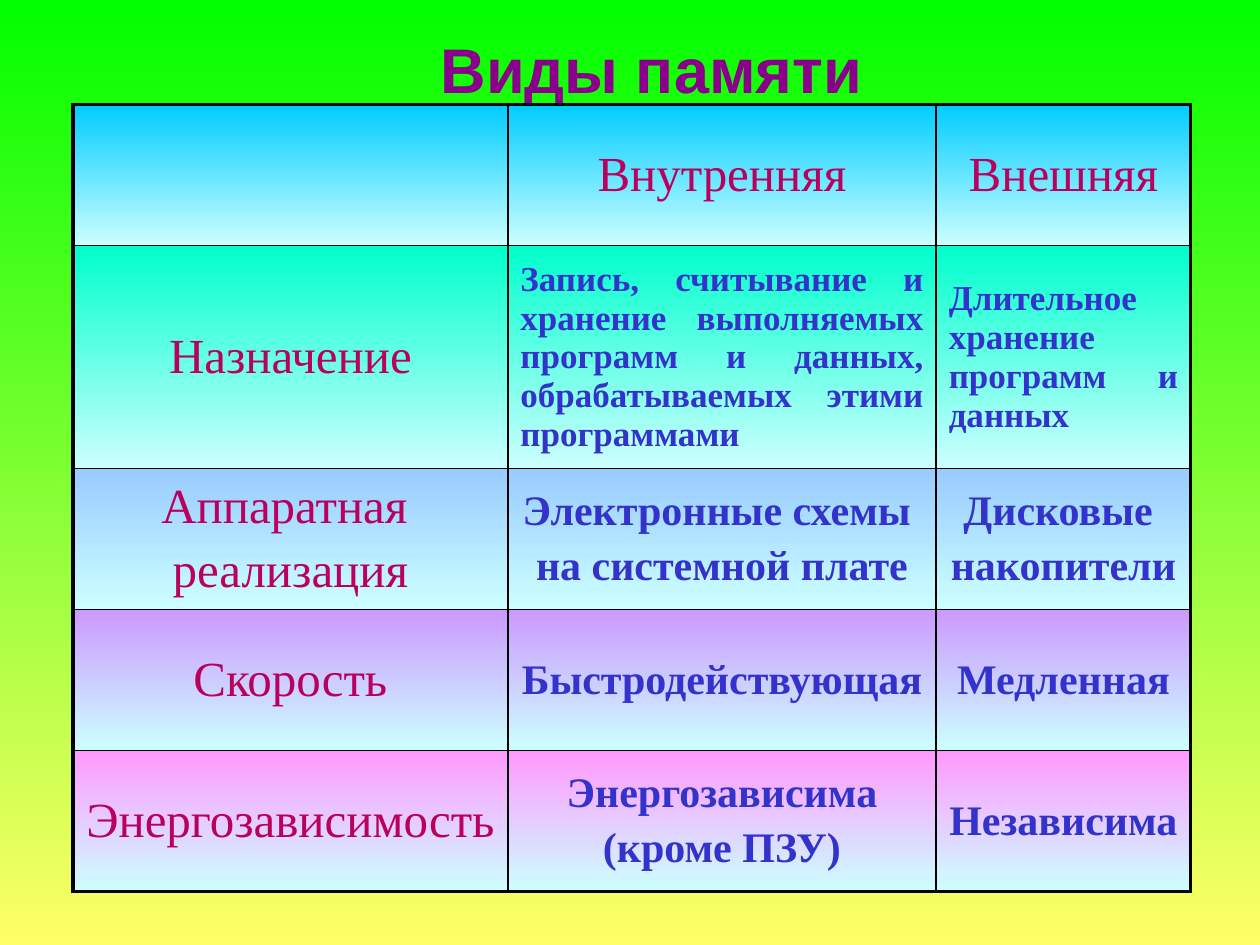
"""Build a slide with a table comparing internal and external memory."""
from lxml.etree import SubElement
from pptx import Presentation
from pptx.dml.color import RGBColor
from pptx.enum.text import MSO_ANCHOR, PP_ALIGN
from pptx.oxml.ns import qn
from pptx.util import Inches, Pt

GREEN = RGBColor(0x00, 0xFF, 0x00)
YELLOW = RGBColor(0xFF, 0xFF, 0x66)
PURPLE = RGBColor(0x8B, 0x00, 0x8B)
CRIMSON = RGBColor(0xBA, 0x00, 0x5D)
BLUE = RGBColor(0x33, 0x33, 0xCC)
BLACK = RGBColor(0x00, 0x00, 0x00)
PALE = RGBColor(0xCC, 0xFF, 0xFF)
ROW_COLOURS = [
    RGBColor(0x00, 0xCC, 0xFF),
    RGBColor(0x00, 0xFF, 0xCC),
    RGBColor(0x99, 0xCC, 0xFF),
    RGBColor(0xCC, 0x99, 0xFF),
    RGBColor(0xFF, 0x99, 0xFF),
]
COLUMN_WIDTHS = [3.45, 3.4, 2.02]
ROW_HEIGHT = 1.12
THIN, THICK = Pt(1), Pt(2.25)
MEMORY_ROWS = [
    ["", "Внутренняя", "Внешняя"],
    [
        "Назначение",
        "Запись, считывание и хранение выполняемых программ и данных, "
        "обрабатываемых этими программами",
        "Длительное хранение программ и данных",
    ],
    ["Аппаратная \nреализация", "Электронные схемы \nна системной плате", "Дисковые \nнакопители"],
    ["Скорость", "Быстродействующая", "Медленная"],
    ["Энергозависимость", "Энергозависима\n(кроме ПЗУ)", "Независима"],
]


def write_text(frame, text, *, size, colour, font="Times New Roman", bold=False,
               align=PP_ALIGN.CENTER):
    frame.text = text
    frame.word_wrap = True
    for index, paragraph in enumerate(frame.paragraphs):
        paragraph.alignment = align
        paragraph.space_before = Pt(size * 0.2 if index else 0)
        paragraph.font.size = Pt(size)
        paragraph.font.name = font
        paragraph.font.bold = bold
        paragraph.font.color.rgb = colour


def fill_downwards(fill, top_colour, bottom_colour):
    fill.gradient()
    fill.gradient_angle = 270
    for stop, colour in zip(fill.gradient_stops, (top_colour, bottom_colour)):
        stop.color.rgb = colour


presentation = Presentation()
presentation.slide_width = Inches(10)
presentation.slide_height = Inches(7.5)
slide = presentation.slides.add_slide(presentation.slide_layouts[6])
fill_downwards(slide.background.fill, GREEN, YELLOW)

title = slide.shapes.add_textbox(Inches(0.92), Inches(0.25), Inches(8.5), Inches(0.58))
title.text_frame.vertical_anchor = MSO_ANCHOR.MIDDLE
write_text(title.text_frame, "Виды памяти", size=36, colour=PURPLE, font="Arial", bold=True)

table = slide.shapes.add_table(
    len(MEMORY_ROWS), len(COLUMN_WIDTHS), Inches(0.58), Inches(0.83),
    Inches(sum(COLUMN_WIDTHS)), Inches(ROW_HEIGHT * len(MEMORY_ROWS)),
).table
table.first_row = table.horz_banding = False
for column, width in zip(table.columns, COLUMN_WIDTHS):
    column.width = Inches(width)

last_row, last_column = len(MEMORY_ROWS) - 1, len(COLUMN_WIDTHS) - 1
for row_index, texts in enumerate(MEMORY_ROWS):
    for column_index, text in enumerate(texts):
        cell = table.cell(row_index, column_index)
        cell.vertical_anchor = MSO_ANCHOR.MIDDLE
        outer_sides = {
            "a:lnL": column_index == 0,
            "a:lnR": column_index == last_column,
            "a:lnT": row_index == 0,
            "a:lnB": row_index == last_row,
        }
        properties = cell._tc.get_or_add_tcPr()
        for side, is_outer in outer_sides.items():
            border = SubElement(properties, qn(side), w=str(THICK if is_outer else THIN))
            solid = SubElement(border, qn("a:solidFill"))
            SubElement(solid, qn("a:srgbClr"), val=str(BLACK))
        fill_downwards(cell.fill, ROW_COLOURS[row_index], PALE)
        if not text:
            continue
        if row_index == 0 or column_index == 0:
            cell.margin_left = cell.margin_right = Inches(0.08)
            write_text(cell.text_frame, text, size=28, colour=CRIMSON)
        elif row_index == 1:
            write_text(cell.text_frame, text, size=20, colour=BLUE, bold=True,
                       align=PP_ALIGN.JUSTIFY)
        else:
            write_text(cell.text_frame, text, size=24, colour=BLUE, bold=True)

presentation.save("out.pptx")
